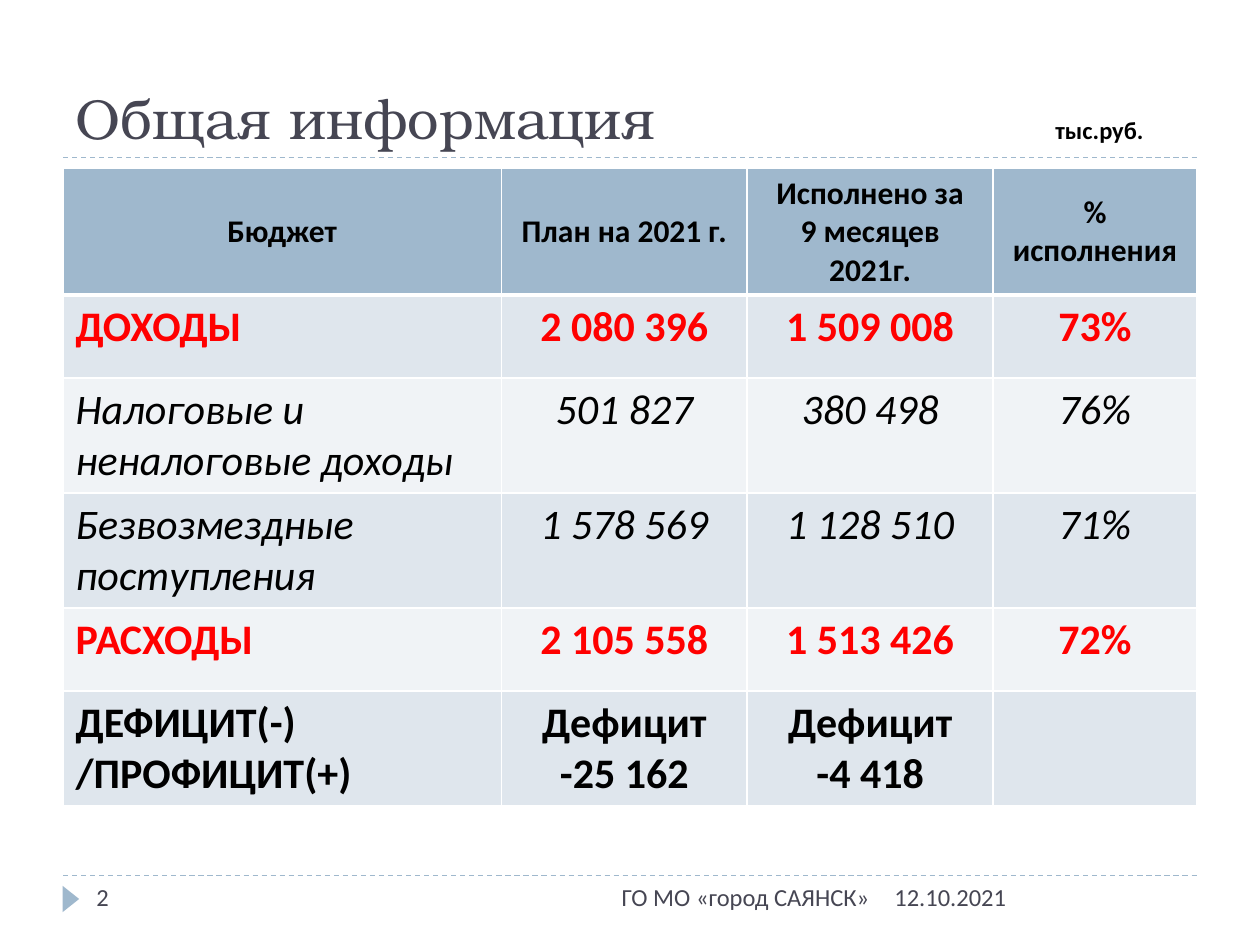
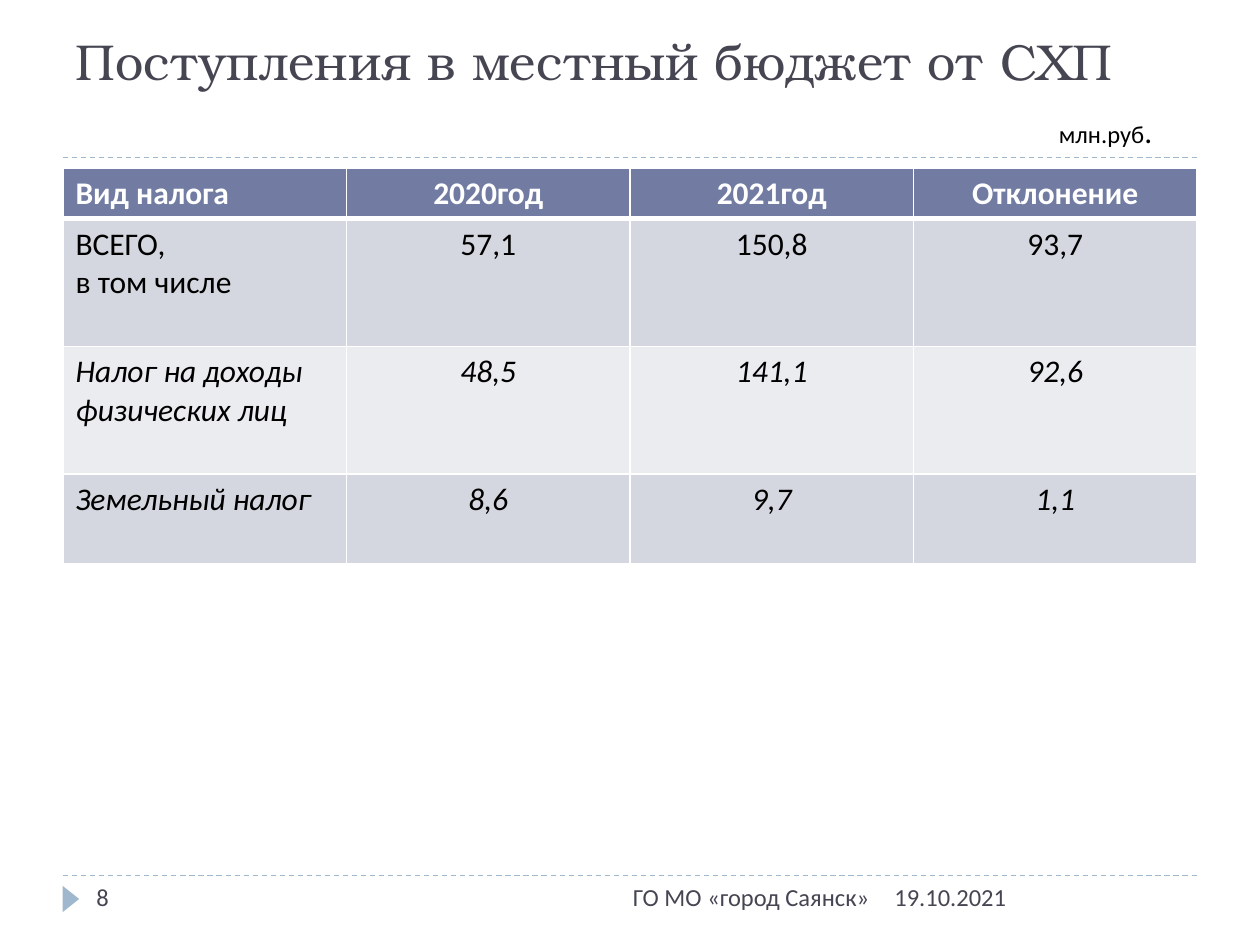
from lxml.etree import SubElement
from pptx import Presentation
from pptx.dml.color import RGBColor
from pptx.enum.dml import MSO_LINE
from pptx.enum.shapes import MSO_CONNECTOR, MSO_SHAPE as SHAPE
from pptx.enum.text import MSO_ANCHOR as ANCHOR, MSO_AUTO_SIZE as FIT, PP_ALIGN as ALIGN
from pptx.oxml.ns import qn
from pptx.util import Pt

COLORS = {
    "title": "464653", "accent": "9FB8CD", "indigo": "727CA3",
    "blue_dark": "DFE6ED", "blue_light": "F0F3F6",
    "indigo_dark": "D5D7E0", "indigo_light": "EBECF0",
    "black": "000000", "white": "FFFFFF", "red": "FF0000",
}
LEFT, RIGHT = 36, 684


def rgb(name):
    return RGBColor.from_string(COLORS[name])


def write(tf, text, size=18, color="black", font="Calibri", bold=False,
          italic=False, align=ALIGN.LEFT, append=False):
    if append:
        r = tf.paragraphs[-1].add_run()
        r.text = text
        runs = [r]
    else:
        tf.text = text
        runs = [r for p in tf.paragraphs for r in p.runs]
    for p in tf.paragraphs:
        p.alignment = align
    for r in runs:
        r.font.name, r.font.size = font, Pt(size)
        r.font.bold, r.font.italic = bold, italic
        r.font.color.rgb = rgb(color)


RED = dict(size=24, color="red", bold=True)
ITALIC = dict(size=24, italic=True)
slides = [
    dict(
        title="Общая информация", title_size=32, title_bottom=3.6,
        number="2", footer="ГО МО «город САЯНСК»", date="12.10.2021",
        unit=[("тыс.руб.", dict(size=14, bold=True))], unit_box=(596, 62, 74, 24),
        header_fill="accent", bands=("blue_dark", "blue_light"), header_anchor=ANCHOR.MIDDLE,
        cols=(250.5, 140.5, 140.5, 116.5), heights=(72.5, 47.5, 65.7, 65.7, 47.5, 65.7),
        rows=[
            (("Бюджет", "План на 2021 г.", "Исполнено за\v9 месяцев 2021г.", "% исполнения"),
             dict(bold=True, align=ALIGN.CENTER)),
            (("ДОХОДЫ", "2 080 396", "1 509 008", "73%"), RED),
            (("Налоговые и неналоговые доходы", "501 827", "380 498", "76%"), ITALIC),
            (("Безвозмездные поступления", "1 578 569", "1 128 510", "71%"), ITALIC),
            (("РАСХОДЫ", "2 105 558", "1 513 426", "72%"), RED),
            (("ДЕФИЦИТ(-) /ПРОФИЦИТ(+)", "Дефицит\n-25 162", "Дефицит\n-4 418", ""),
             dict(size=24, bold=True)),
        ],
    ),
    dict(
        title="Поступления в местный бюджет от СХП", title_size=28.8, title_bottom=38,
        number="8", footer="ГО МО «город Саянск»", date="19.10.2021",
        unit=[("млн.руб", dict(size=14)), (".", dict(size=18))], unit_box=(598, 60.5, 79, 29),
        header_fill="indigo", bands=("indigo_dark", "indigo_light"), header_anchor=ANCHOR.TOP,
        cols=(162,) * 4, heights=(29, 73, 73, 51),
        rows=[
            (("Вид налога", "2020год", "2021год", "Отклонение"), dict(color="white", bold=True)),
            (("ВСЕГО,\nв том числе", "57,1", "150,8", "93,7"), {}),
            (("Налог на доходы физических лиц", "48,5", "141,1", "92,6"), dict(italic=True)),
            (("Земельный налог", "8,6", "9,7", "1,1"), dict(italic=True)),
        ],
    ),
]

prs = Presentation()
prs.slide_width, prs.slide_height = Pt(720), Pt(540)

for data in slides:
    s = prs.slides.add_slide(prs.slide_layouts[5])

    for y in (500.4, 90):
        line = s.shapes.add_connector(MSO_CONNECTOR.STRAIGHT, Pt(LEFT), Pt(y), Pt(RIGHT), Pt(y))
        line.line.color.rgb = rgb("accent")
        line.line.width = Pt(0.75)
        line.line.dash_style = MSO_LINE.DASH
        SubElement(line._element.spPr, qn("a:effectLst"))

    marker = s.shapes.add_shape(SHAPE.ISOSCELES_TRIANGLE, Pt(33), Pt(509), Pt(15), Pt(9.4))
    marker.rotation = 90
    marker.shadow.inherit = False
    marker.fill.solid()
    marker.fill.fore_color.rgb = rgb("accent")
    marker.line.fill.background()

    title = s.shapes.title
    title.left, title.top, title.width, title.height = Pt(LEFT), Pt(12), Pt(648), Pt(78)
    tf = title.text_frame
    tf.auto_size, tf.vertical_anchor = FIT.NONE, ANCHOR.BOTTOM
    tf.margin_bottom = Pt(data["title_bottom"])
    write(tf, data["title"], size=data["title_size"], color="title", font="TeX Gyre Bonum")

    footer = dict(size=14, color="title")
    boxes = [
        ((504, 500.4, 180, 29), [(data["date"], footer)]),
        ((228, 500.4, 276, 29), [(data["footer"], dict(footer, align=ALIGN.RIGHT))]),
        ((48, 500.4, 156, 29), [(data["number"], footer)]),
        (data["unit_box"], data["unit"]),
    ]
    for box, parts in boxes:
        tf = s.shapes.add_textbox(*map(Pt, box)).text_frame
        tf.word_wrap = True
        for i, (text, style) in enumerate(parts):
            write(tf, text, append=i > 0, **style)

    rows, cols, heights = data["rows"], data["cols"], data["heights"]
    table = s.shapes.add_table(len(rows), len(cols), Pt(LEFT), Pt(96),
                               Pt(sum(cols)), Pt(sum(heights))).table
    table.horz_banding = False
    for column, width in zip(table.columns, cols):
        column.width = Pt(width)
    for i, (texts, style) in enumerate(rows):
        table.rows[i].height = Pt(heights[i])
        for j, text in enumerate(texts):
            cell = table.cell(i, j)
            tcPr = cell._tc.get_or_add_tcPr()
            widths = dict(lnL=1, lnR=1, lnT=3 if i == 1 else 1, lnB=3 if i == 0 else 1)
            for side, width in widths.items():
                ln = SubElement(tcPr, qn(f"a:{side}"), w=str(Pt(width)))
                fill = SubElement(ln, qn("a:solidFill"))
                SubElement(fill, qn("a:srgbClr"), val=COLORS["white"])
            cell.fill.solid()
            cell.fill.fore_color.rgb = rgb(data["bands"][(i - 1) % 2] if i else data["header_fill"])
            cell.vertical_anchor = ANCHOR.TOP if i else data["header_anchor"]
            align = ALIGN.CENTER if j else ALIGN.LEFT
            write(cell.text_frame, text, **{"align": align, **style})

prs.save("out.pptx")
